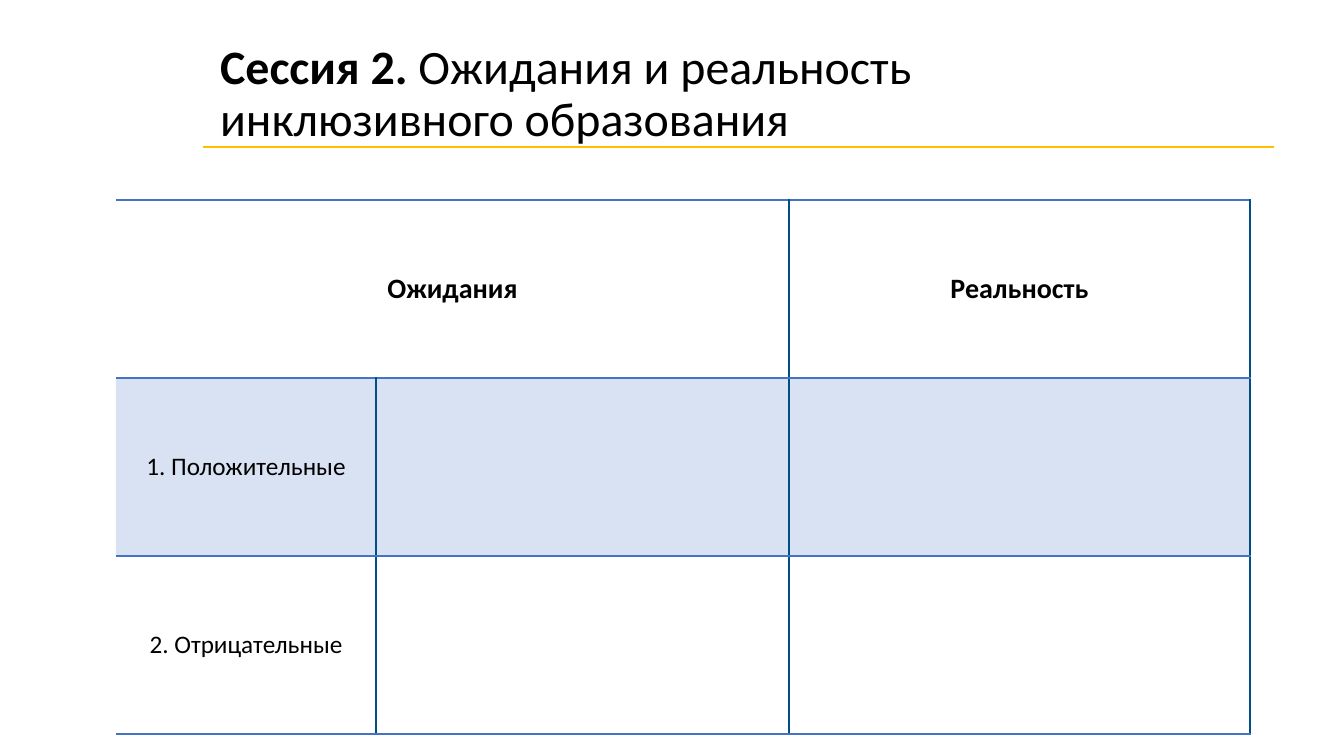
from lxml.etree import SubElement
from pptx import Presentation
from pptx.dml.color import RGBColor
from pptx.enum.shapes import MSO_CONNECTOR
from pptx.enum.text import MSO_ANCHOR, MSO_AUTO_SIZE, PP_ALIGN
from pptx.oxml.ns import qn
from pptx.util import Emu, Pt

EMU_PER_PX = 914400 / 100.8
FONT = "Calibri"
BLACK = RGBColor(0x00, 0x00, 0x00)
GOLD = RGBColor(0xFF, 0xC0, 0x00)
BLUE = RGBColor(0x44, 0x72, 0xC4)
NAVY = RGBColor(0x00, 0x4E, 0x86)

COLUMN_WIDTHS = [260, 413, 461]
ROW_HEIGHT = 178
ROWS = [
    ["Ожидания", "", "Реальность"],
    ["1. Положительные", "", ""],
    ["2. Отрицательные", "", ""],
]
NO_GRID_STYLE = "{2D5ABB26-0587-4C30-8999-92F81FD0307C}"


def px(length):
    return Emu(round(length * EMU_PER_PX))


def add_text(paragraph, text, size=18, bold=False, color=BLACK):
    run = paragraph.add_run()
    run.text = text
    run.font.name = FONT
    run.font.size = Pt(size)
    run.font.bold = bold
    run.font.color.rgb = color


def format_title(slide):
    title = slide.shapes.title
    title.left, title.top, title.width, title.height = px(210), px(59), px(1040), px(72)
    frame = title.text_frame
    frame.word_wrap = True
    frame.auto_size = MSO_AUTO_SIZE.NONE
    frame.vertical_anchor = MSO_ANCHOR.MIDDLE
    paragraph = frame.paragraphs[0]
    paragraph.alignment = PP_ALIGN.LEFT
    paragraph.line_spacing = 0.9
    add_text(paragraph, "Сессия 2.", size=34.2, bold=True)
    add_text(paragraph, " Ожидания и реальность", size=34.2)
    paragraph.add_line_break()
    add_text(paragraph, "инклюзивного образования", size=34.2)


def add_rule(slide, left, right, y, color, width):
    rule = slide.shapes.add_connector(
        MSO_CONNECTOR.STRAIGHT, px(left), px(y), px(right), px(y))
    rule.line.color.rgb = color
    rule.line.width = Pt(width)
    SubElement(rule._element.spPr, qn("a:effectLst"))


def set_borders(cell, **colors):
    """Give the named sides (L, R, T, B) a one-point line."""
    properties = cell._tc.get_or_add_tcPr()
    for side in "LRTB":
        if side in colors:
            line = SubElement(properties, qn(f"a:ln{side}"), w=str(Pt(1)))
            fill = SubElement(line, qn("a:solidFill"))
            SubElement(fill, qn("a:srgbClr"), val=str(colors[side]))


def fill_cell(cell, color=None, opacity=100):
    if color is None:
        cell.fill.background()
        return
    cell.fill.solid()
    cell.fill.fore_color.rgb = color
    color_element = cell._tc.tcPr.find(qn("a:solidFill")).find(qn("a:srgbClr"))
    SubElement(color_element, qn("a:alpha"), val=str(opacity * 1000))


def cell_borders(row, column):
    borders = {"R": NAVY}
    if column > 0:
        borders["L"] = NAVY
    if row == 0:
        borders["T"] = BLUE
    if row == 1:
        borders["T"] = BLUE
    if row != 1:
        borders["B"] = BLUE
    return borders


def add_comparison_table(slide):
    frame = slide.shapes.add_table(
        len(ROWS), len(COLUMN_WIDTHS), px(116), px(200),
        px(sum(COLUMN_WIDTHS)), px(ROW_HEIGHT * len(ROWS)))
    table = frame.table
    table._tbl.tblPr.find(qn("a:tableStyleId")).text = NO_GRID_STYLE
    for column, width in zip(table.columns, COLUMN_WIDTHS):
        column.width = px(width)
    for row in table.rows:
        row.height = px(ROW_HEIGHT)

    # The first heading covers the label and answer columns
    table.cell(0, 0).merge(table.cell(0, 1))
    for row, texts in enumerate(ROWS):
        for column, text in enumerate(texts):
            cell = table.cell(row, column)
            set_borders(cell, **cell_borders(row, column))
            if row == 1:
                fill_cell(cell, BLUE, opacity=20)
            else:
                fill_cell(cell)
            cell.vertical_anchor = MSO_ANCHOR.MIDDLE
            if text:
                paragraph = cell.text_frame.paragraphs[0]
                paragraph.alignment = PP_ALIGN.CENTER
                heading = row == 0
                add_text(paragraph, text, size=20 if heading else 18, bold=heading)


def main():
    presentation = Presentation()
    presentation.slide_width, presentation.slide_height = px(1344), px(756)
    slide = presentation.slides.add_slide(presentation.slide_layouts[5])

    # Heading with its rule
    format_title(slide)
    add_rule(slide, 203, 1274, 147, GOLD, 1.5)

    # Expectations against reality
    add_comparison_table(slide)

    presentation.save("out.pptx")


if __name__ == "__main__":
    main()
